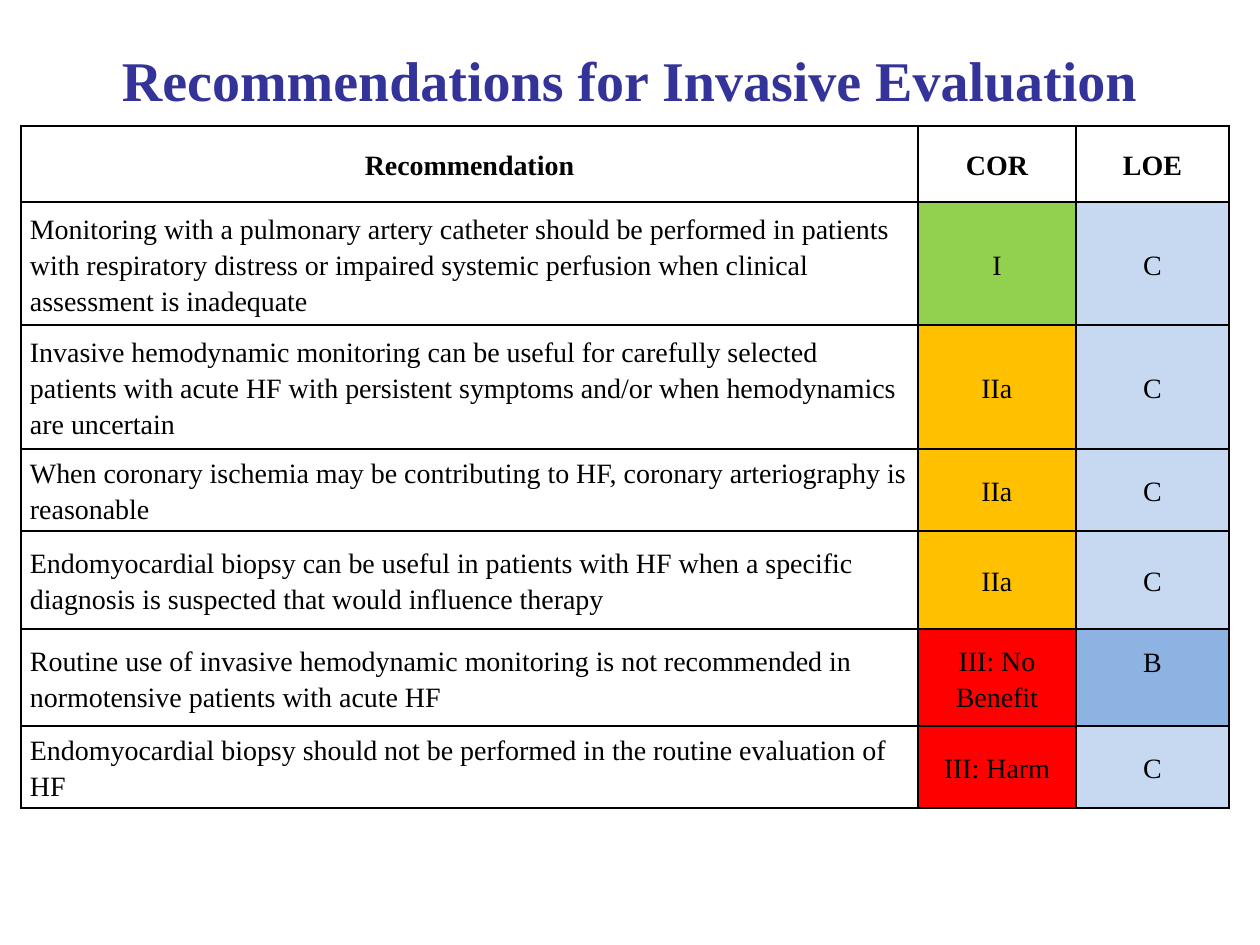
from lxml.etree import SubElement
from pptx import Presentation
from pptx.dml.color import RGBColor
from pptx.enum.text import MSO_ANCHOR, PP_ALIGN
from pptx.oxml.ns import qn
from pptx.util import Emu, Pt

FONT = "Times New Roman"
BLACK = RGBColor(0x00, 0x00, 0x00)
WHITE = RGBColor(0xFF, 0xFF, 0xFF)
NAVY = RGBColor(0x33, 0x33, 0x99)
GREEN = RGBColor(0x92, 0xD0, 0x50)
AMBER = RGBColor(0xFF, 0xC0, 0x00)
RED = RGBColor(0xFF, 0x00, 0x00)
PALE_BLUE = RGBColor(0xC6, 0xD9, 0xF1)
MID_BLUE = RGBColor(0x8D, 0xB3, 0xE2)

CLASS_FILLS = {"I": GREEN, "IIa": AMBER, "III: No Benefit": RED, "III: Harm": RED}
LEVEL_FILLS = {"B": MID_BLUE, "C": PALE_BLUE}

COLUMN_WIDTHS = [897, 158, 153]
ROWS = [
    (76, "Recommendation", "COR", "LOE"),
    (123, "Monitoring with a pulmonary artery catheter should be performed in patients "
          "with respiratory distress or impaired systemic perfusion when clinical "
          "assessment is inadequate", "I", "C"),
    (124, "Invasive hemodynamic monitoring can be useful for carefully selected "
          "patients with acute HF with persistent symptoms and/or when hemodynamics "
          "are uncertain", "IIa", "C"),
    (82, "When coronary ischemia may be contributing to HF, coronary arteriography is "
         "reasonable", "IIa", "C"),
    (98, "Endomyocardial biopsy can be useful in patients with HF when a specific "
         "diagnosis is suspected that would influence therapy", "IIa", "C"),
    (97, "Routine use of invasive hemodynamic monitoring is not recommended in "
         "normotensive patients with acute HF", "III: No Benefit", "B"),
    (82, "Endomyocardial biopsy should not be performed in the routine evaluation of "
         "HF", "III: Harm", "C"),
]


def px(length):
    """Turn px, at 126 to the inch, into EMU."""
    return Emu(round(length * 914400 / 126))


def add_span(para, text, size, color, bold):
    span = para.add_run()
    span.text = text
    span.font.name = FONT
    span.font.size = Pt(size)
    span.font.bold = bold
    span.font.color.rgb = color


deck = Presentation()
deck.slide_width, deck.slide_height = px(1260), px(945)
page = deck.slides.add_slide(deck.slide_layouts[6])

# Title
title = page.shapes.add_textbox(px(63), px(0), px(1134), px(158)).text_frame
title.word_wrap = True
title.vertical_anchor = MSO_ANCHOR.MIDDLE
title.paragraphs[0].alignment = PP_ALIGN.CENTER
add_span(title.paragraphs[0], "Recommendations for Invasive Evaluation", 32, NAVY, True)

# Recommendation table
table = page.shapes.add_table(
    len(ROWS), len(COLUMN_WIDTHS), px(21), px(126),
    px(sum(COLUMN_WIDTHS)), px(sum(row[0] for row in ROWS)),
).table
table.first_row = False
table.horz_banding = False
for column, width in zip(table.columns, COLUMN_WIDTHS):
    column.width = px(width)

for row_index, (height, *texts) in enumerate(ROWS):
    table.rows[row_index].height = px(height)
    is_header = row_index == 0
    fills = [WHITE, CLASS_FILLS.get(texts[1], WHITE), LEVEL_FILLS.get(texts[2], WHITE)]
    for column_index, (text, fill) in enumerate(zip(texts, fills)):
        cell = table.cell(row_index, column_index)
        cell.vertical_anchor = MSO_ANCHOR.MIDDLE
        cell.margin_left = cell.margin_right = px(9)
        cell.margin_top = px(0)
        # Level B sits one half line above the middle of its cell
        cell.margin_bottom = px(34 if text == "B" else 0)

        para = cell.text_frame.paragraphs[0]
        centred = is_header or column_index > 0
        para.alignment = PP_ALIGN.CENTER if centred else PP_ALIGN.LEFT
        para.line_spacing = 1.15
        add_span(para, text, 16, BLACK, is_header)

        # Borders come before the fill in the cell properties
        properties = cell._tc.get_or_add_tcPr()
        for side in ("a:lnL", "a:lnR", "a:lnT", "a:lnB"):
            border = SubElement(properties, qn(side), w=str(Pt(1)))
            paint = SubElement(border, qn("a:solidFill"))
            SubElement(paint, qn("a:srgbClr"), val=str(BLACK))
        cell.fill.solid()
        cell.fill.fore_color.rgb = fill

deck.save("out.pptx")
